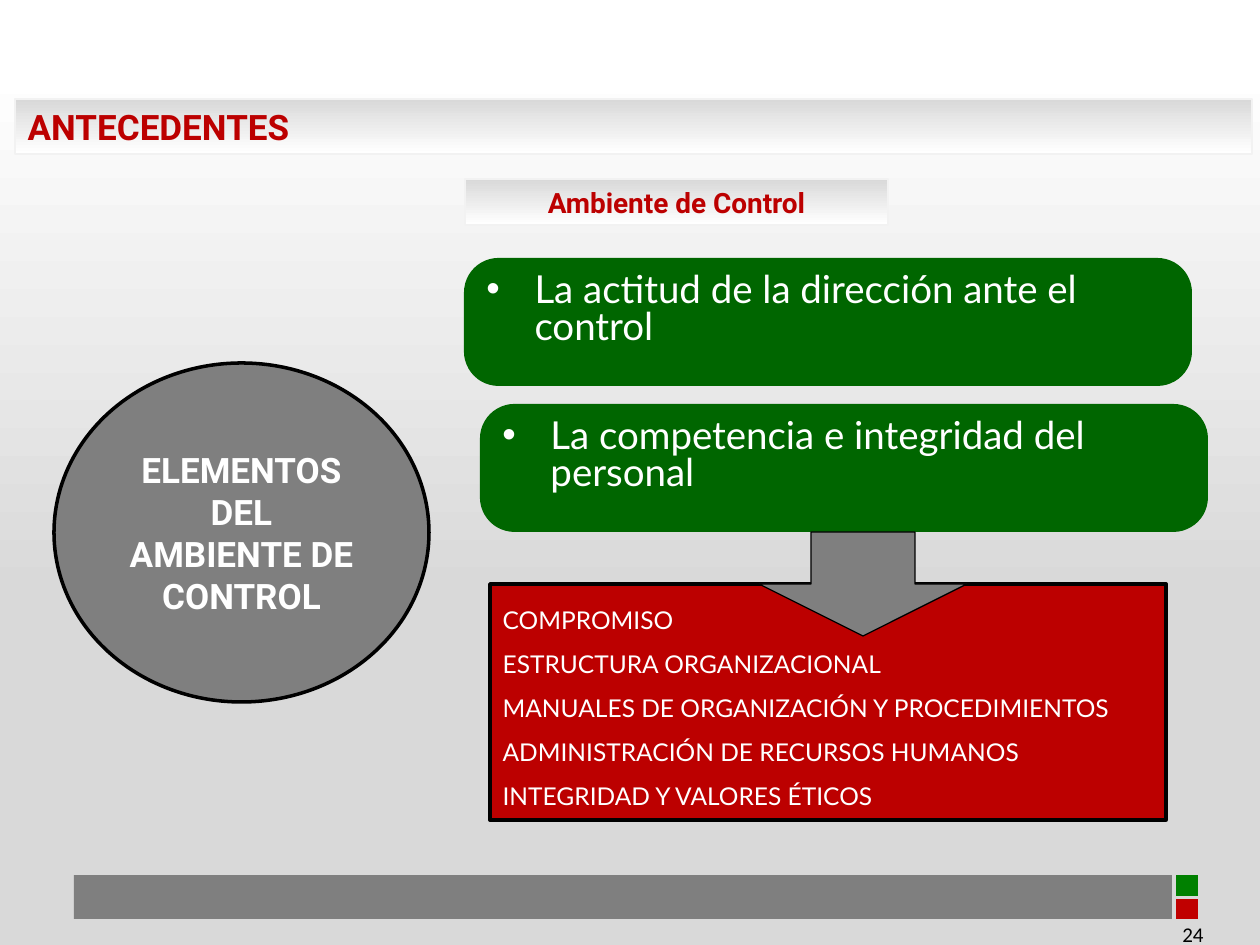
from lxml.etree import SubElement
from pptx import Presentation
from pptx.dml.color import RGBColor
from pptx.enum.shapes import MSO_SHAPE
from pptx.enum.text import MSO_ANCHOR, MSO_AUTO_SIZE, PP_ALIGN
from pptx.oxml.ns import qn
from pptx.util import Pt

PX = 914400 / 126

WHITE = RGBColor(0xFF, 0xFF, 0xFF)
BLACK = RGBColor(0x00, 0x00, 0x00)
PALE = RGBColor(0xF2, 0xF2, 0xF2)
SILVER = RGBColor(0xD9, 0xD9, 0xD9)
GRAY = RGBColor(0x7F, 0x7F, 0x7F)
RED = RGBColor(0xBC, 0x00, 0x00)
FOOTER_RED = RGBColor(0xC0, 0x00, 0x00)
GREEN = RGBColor(0x00, 0x66, 0x00)
FOOTER_GREEN = RGBColor(0x00, 0x80, 0x00)


def add_filled(kind, box, color, line_width=0):
    shape = slide.shapes.add_shape(kind, *[round(value * PX) for value in box])
    shape.shadow.inherit = False
    shape.fill.solid()
    shape.fill.fore_color.rgb = color
    if line_width:
        shape.line.color.rgb = BLACK
        shape.line.width = Pt(line_width)
    else:
        shape.line.fill.background()
    return shape


def set_font(paragraph, name, size, color, bold=False):
    font = paragraph.font
    font.name, font.size, font.bold = name, Pt(size), bold
    font.color.rgb = color


presentation = Presentation()
presentation.slide_width = round(1260 * PX)
presentation.slide_height = round(945 * PX)
slide = presentation.slides.add_slide(presentation.slide_layouts[1])

# Background, silver below and white above
background = slide.background.fill
background.gradient()
background.gradient_angle = 90
for stop, position, color in zip(background.gradient_stops, (0.37, 0.93), (SILVER, WHITE)):
    stop.position = position
    stop.color.rgb = color

# Footer
for box, color in [
    ((1176, 899, 22, 20), FOOTER_RED),
    ((1176, 875, 22, 21), FOOTER_GREEN),
    ((74, 875, 1098, 44), GRAY),
]:
    add_filled(MSO_SHAPE.RECTANGLE, box, color)

number_box = slide.shapes.add_textbox(*[round(value * PX) for value in (932, 909, 284, 50)])
number_box.text_frame.vertical_anchor = MSO_ANCHOR.MIDDLE
number_box.text_frame.word_wrap = True
number = number_box.text_frame.paragraphs[0]
number.text = "24"
number.alignment = PP_ALIGN.RIGHT
set_font(number, "Calibri", 12, BLACK)

# Title bar and subtitle bar
title = slide.shapes.title
title.left, title.top, title.width, title.height = [
    round(value * PX) for value in (15, 99, 1237, 55)]
subtitle = add_filled(MSO_SHAPE.RECTANGLE, (465, 179, 423, 46), SILVER)
for bar, text, size, alignment in [
    (title, "ANTECEDENTES", 20, PP_ALIGN.LEFT),
    (subtitle, "Ambiente de Control", 16, PP_ALIGN.CENTER),
]:
    bar.fill.gradient()
    bar.fill.gradient_angle = 90
    for stop, position, color in zip(bar.fill.gradient_stops, (0, 1), (WHITE, SILVER)):
        stop.position = position
        stop.color.rgb = color
    bar.line.color.rgb = PALE
    bar.line.width = Pt(0.75)
    frame = bar.text_frame
    frame.text = text
    frame.auto_size = MSO_AUTO_SIZE.NONE
    frame.vertical_anchor = MSO_ANCHOR.MIDDLE
    frame.paragraphs[0].alignment = alignment
    set_font(frame.paragraphs[0], "Roboto", size, RED, bold=True)

# Green statements
for left, top, text in [
    (480, 404, "La competencia e integridad del personal"),
    (464, 258, "La actitud de la dirección ante el control"),
]:
    statement = add_filled(MSO_SHAPE.ROUNDED_RECTANGLE, (left, top, 728, 128), GREEN)
    statement.adjustments[0] = 0.27
    frame = statement.text_frame
    frame.text = text
    frame.vertical_anchor = MSO_ANCHOR.TOP
    paragraph = frame.paragraphs[0]
    paragraph.alignment = PP_ALIGN.LEFT
    paragraph.line_spacing = 0.8
    properties = paragraph._p.get_or_add_pPr()
    properties.set("marL", str(round(48 * PX)))
    properties.set("indent", str(round(-48 * PX)))
    SubElement(properties, qn("a:buFont")).set("typeface", "Arial")
    SubElement(properties, qn("a:buChar")).set("char", "•")
    set_font(paragraph, "Lato", 22, WHITE)

# Red list
body = slide.placeholders[1]
body.left, body.top, body.width, body.height = [
    round(value * PX) for value in (490, 584, 676, 236)]
body.fill.solid()
body.fill.fore_color.rgb = RED
body.line.color.rgb = BLACK
body.line.width = Pt(2)
frame = body.text_frame
frame.text = "\n".join([
    "COMPROMISO",
    "ESTRUCTURA ORGANIZACIONAL",
    "MANUALES DE ORGANIZACIÓN Y PROCEDIMIENTOS",
    "ADMINISTRACIÓN DE RECURSOS HUMANOS",
    "INTEGRIDAD Y VALORES ÉTICOS",
])
frame.auto_size = MSO_AUTO_SIZE.NONE
frame.vertical_anchor = MSO_ANCHOR.TOP
for paragraph in frame.paragraphs:
    paragraph.alignment = PP_ALIGN.JUSTIFY
    paragraph.line_spacing = 1.5
    paragraph.space_before = Pt(0)
    properties = paragraph._p.get_or_add_pPr()
    properties.set("marL", "0")
    properties.set("indent", "0")
    SubElement(properties, qn("a:buNone"))
    set_font(paragraph, "Lato", 14, WHITE)

add_filled(MSO_SHAPE.DOWN_ARROW, (759, 532, 208, 104), GRAY, 0.75)

# Topic ellipse
topic = add_filled(MSO_SHAPE.OVAL, (54, 363, 375, 339), GRAY, 2)
topic.text_frame.text = "ELEMENTOS DEL AMBIENTE DE CONTROL"
topic.text_frame.vertical_anchor = MSO_ANCHOR.MIDDLE
topic.text_frame.paragraphs[0].alignment = PP_ALIGN.CENTER
set_font(topic.text_frame.paragraphs[0], "Roboto", 20, WHITE, bold=True)

presentation.save("out.pptx")
